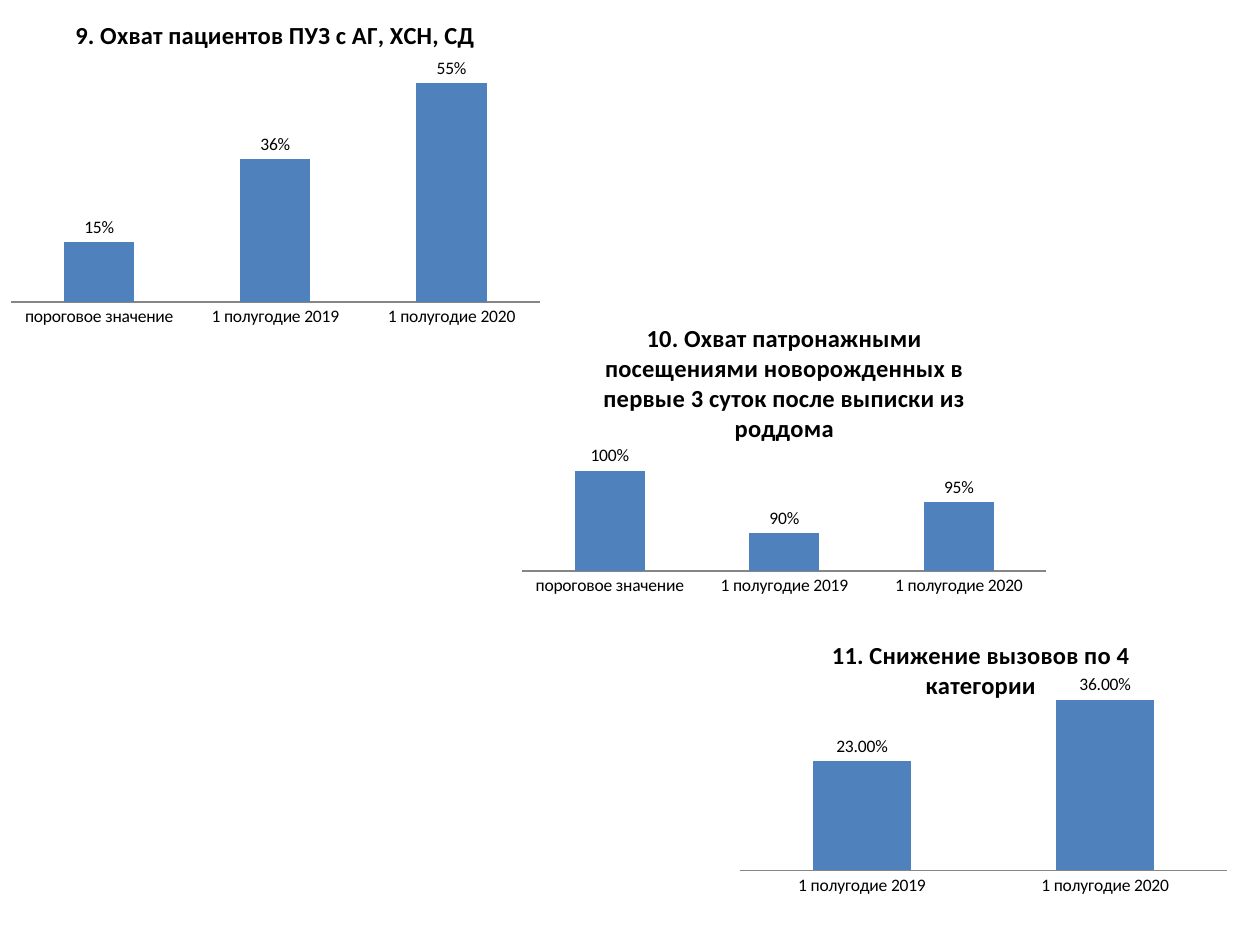
"""Build a slide with three column charts of clinic performance indicators."""
from lxml import etree
from pptx import Presentation
from pptx.chart.data import CategoryChartData
from pptx.dml.color import RGBColor
from pptx.enum.chart import XL_CHART_TYPE, XL_LABEL_POSITION, XL_TICK_MARK
from pptx.oxml.ns import qn
from pptx.util import Inches, Pt

COLUMNS = XL_CHART_TYPE.COLUMN_CLUSTERED
OUTSIDE = XL_LABEL_POSITION.OUTSIDE_END
NO_TICK = XL_TICK_MARK.NONE
BLUE = RGBColor(0x4F, 0x81, 0xBD)
BLACK = RGBColor(0, 0, 0)
GRAY = RGBColor(0x86, 0x86, 0x86)
FONT = "Calibri"

HALF_YEARS = ["1 полугодие 2019", "1 полугодие 2020"]
WITH_THRESHOLD = ["пороговое значение"] + HALF_YEARS
INDICATORS = [
    {"title": "9. Охват пациентов ПУЗ с АГ, ХСН, СД",
     "cell": (0, 0, 437, 265), "plot": (0.02, 0.19, 0.96, 0.715),
     "categories": WITH_THRESHOLD, "values": (0.15, 0.36, 0.55),
     "scale": (0, 0.6), "format": "0%"},
    {"title": "10. Охват патронажными посещениями новорожденных "
              "в первые 3 суток после выписки из роддома",
     "cell": (406, 241, 433, 236), "plot": (0.02, 0.52, 0.96, 0.38),
     "categories": WITH_THRESHOLD, "values": (1, 0.9, 0.95),
     "scale": (0.84, 1.02), "format": "0%"},
    {"title": "11. Снижение вызовов по 4 категории",
     "cell": (571, 493, 415, 237), "plot": (0.04, 0.2, 0.93, 0.635),
     "categories": HALF_YEARS, "values": (0.23, 0.36),
     "scale": (0, 0.4), "format": "0.00%"},
]


def set_values(target, values):
    for name, value in values.items():
        setattr(target, name, value)


def place_plot(chart, shares):
    area = chart.element.find(".//" + qn("c:plotArea"))
    for old in area.findall(qn("c:layout")):
        area.remove(old)
    layout = etree.Element(qn("c:layout"))
    manual = etree.SubElement(layout, qn("c:manualLayout"))
    settings = [("layoutTarget", "inner"), ("xMode", "edge"), ("yMode", "edge")]
    for tag, value in settings + list(zip("xywh", shares)):
        etree.SubElement(manual, qn("c:" + tag)).set("val", str(value))
    area.insert(0, layout)


deck = Presentation()
set_values(deck, {"slide_width": Inches(10), "slide_height": Inches(7.5)})
page = deck.slides.add_slide(deck.slide_layouts[6])
column, row = deck.slide_width // 1000, deck.slide_height // 750

for indicator in INDICATORS:
    data = CategoryChartData(number_format=indicator["format"])
    data.categories = indicator["categories"]
    data.add_series("Series 1", indicator["values"])
    left, top, width, height = indicator["cell"]
    chart = page.shapes.add_chart(
        COLUMNS, left * column, top * row, width * column, height * row, data).chart
    set_values(chart, {"has_legend": False, "has_title": True})
    set_values(chart.font, {"name": FONT, "size": Pt(10)})
    chart.font.color.rgb = BLACK

    title = chart.chart_title.text_frame
    title.text = indicator["title"]
    span = title.paragraphs[0].runs[0]
    set_values(span.font, {"name": FONT, "size": Pt(14), "bold": True})
    span.font.color.rgb = BLACK

    low, high = indicator["scale"]
    set_values(chart.value_axis, {
        "visible": False, "has_major_gridlines": False,
        "minimum_scale": low, "maximum_scale": high})
    set_values(chart.category_axis, {
        "major_tick_mark": NO_TICK, "minor_tick_mark": NO_TICK})
    chart.category_axis.format.line.color.rgb = GRAY

    plot = chart.plots[0]
    set_values(plot, {"gap_width": 150, "overlap": -25,
                      "vary_by_categories": False, "has_data_labels": True})
    set_values(plot.data_labels, {
        "show_value": True, "number_format": indicator["format"],
        "number_format_is_linked": False, "position": OUTSIDE})
    fill = plot.series[0].format.fill
    fill.solid()
    fill.fore_color.rgb = BLUE
    place_plot(chart, indicator["plot"])

deck.save("out.pptx")
